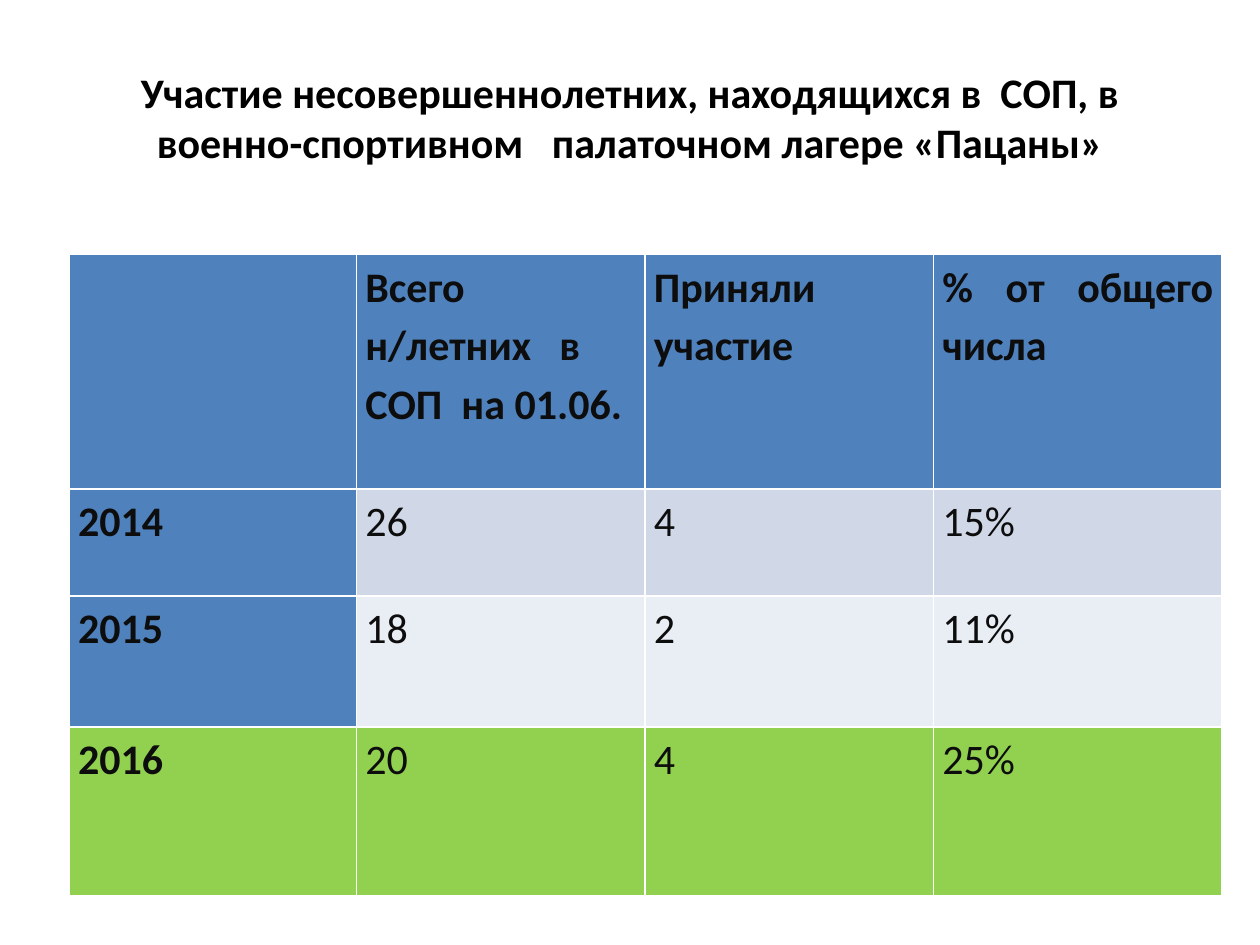
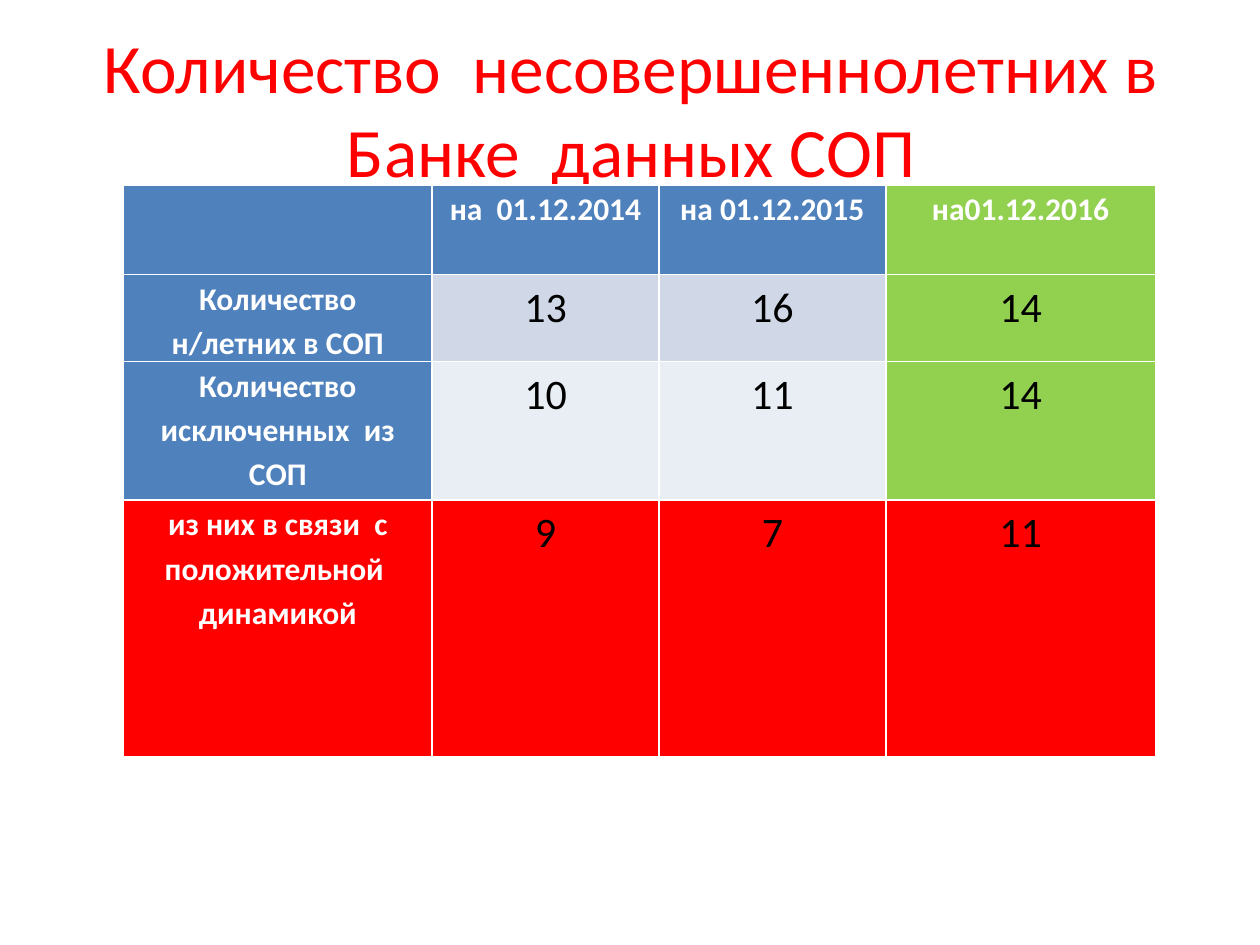
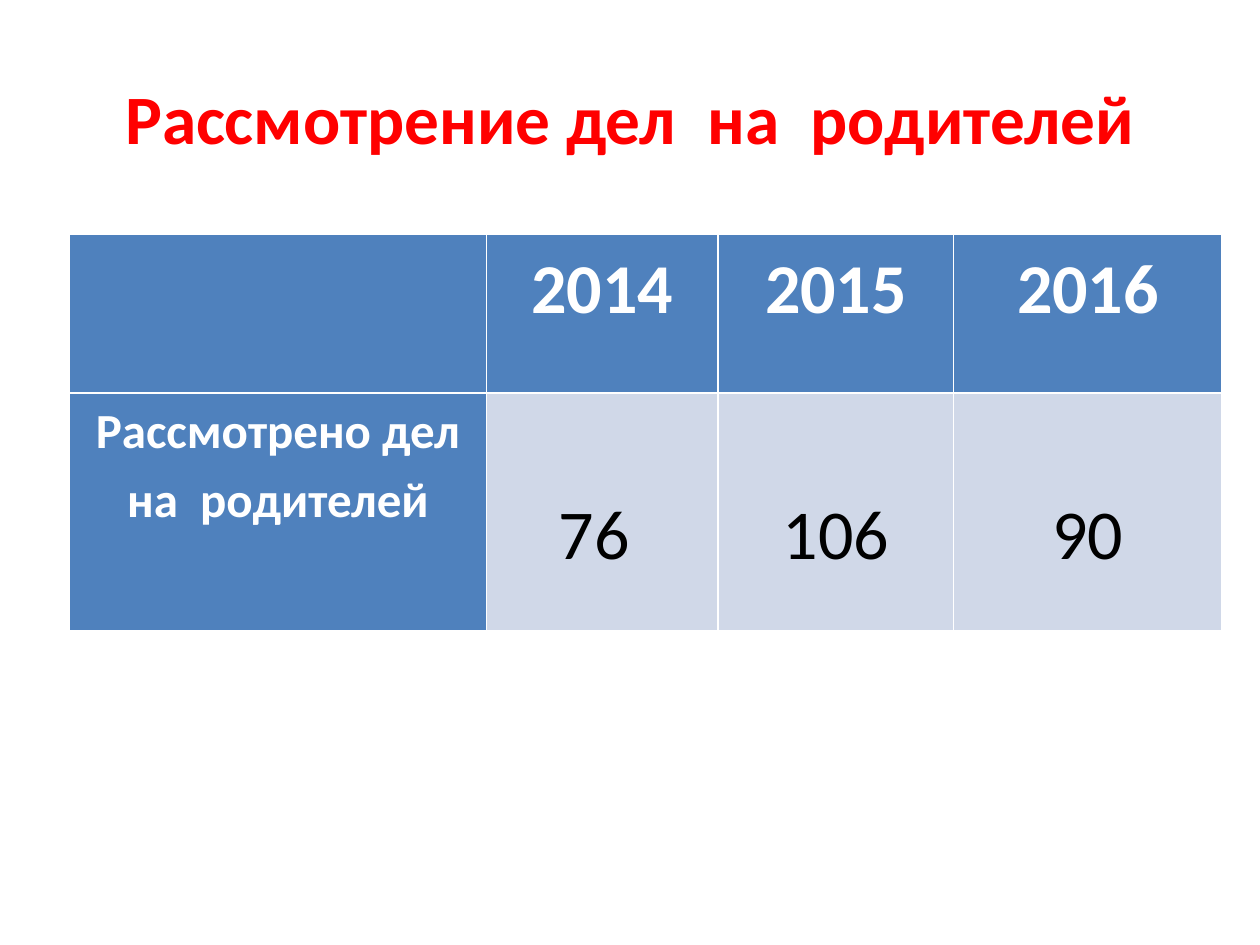
import pptx
import pptx.dml.color
import pptx.enum.text
import pptx.util
from pptx.util import Inches

FONT = "Calibri"
COLORS = {
    "header": "4F81BD",
    "band_dark": "D0D8E8",
    "band_light": "E9EDF4",
    "green": "92D050",
    "red": "FF0000",
    "white": "FFFFFF",
    "black": "000000",
    "ink": "0D0D0D",
}
ALIGN = pptx.enum.text.PP_ALIGN


def rgb(color):
    return pptx.dml.color.RGBColor.from_string(COLORS[color])


def style_paragraph(paragraph, size, color, bold, align):
    paragraph.alignment = align
    paragraph.font.name = FONT
    paragraph.font.size = pptx.util.Pt(size)
    paragraph.font.bold = bold
    paragraph.font.color.rgb = rgb(color)


def add_title(slide, text, box, size=39.6, color="red", bold=True):
    title = slide.shapes.add_textbox(*map(Inches, box)).text_frame
    title.word_wrap = True
    title.vertical_anchor = pptx.enum.text.MSO_ANCHOR.MIDDLE
    title.text = text
    style_paragraph(title.paragraphs[0], size, color, bold, ALIGN.CENTER)


def cell_fill(row, column, row_fills, column_fills):
    if row in row_fills:
        return row_fills[row]
    if column in column_fills:
        return column_fills[column]
    if row == 0 or column == 0:
        return "header"
    return "band_dark" if row % 2 else "band_light"


def add_data_table(slide, rows, left, top, widths, heights, header_size, label_size,
                   value_size, heading_color="white", value_color="black",
                   align=ALIGN.CENTER, row_fills={}, column_fills={}, value_top=0):
    table = slide.shapes.add_table(
        len(rows), len(widths), Inches(left), Inches(top),
        Inches(sum(widths)), Inches(sum(heights))).table
    table.first_col = True
    for column, width in zip(table.columns, widths):
        column.width = Inches(width)
    for table_row, height in zip(table.rows, heights):
        table_row.height = Inches(height)
    for r, values in enumerate(rows):
        for c, text in enumerate(values):
            cell = table.cell(r, c)
            cell.fill.solid()
            cell.fill.fore_color.rgb = rgb(cell_fill(r, c, row_fills, column_fills))
            cell.margin_left = cell.margin_right = Inches(0.07)
            cell.margin_top = cell.margin_bottom = 0
            if not text:
                continue
            is_heading = r == 0 or c == 0
            if not is_heading:
                cell.margin_top = Inches(value_top)
            size = header_size if r == 0 else label_size if c == 0 else value_size
            color = heading_color if is_heading else value_color
            cell.text = text
            for paragraph in cell.text_frame.paragraphs:
                style_paragraph(paragraph, size, color, is_heading, align)
                paragraph.line_spacing = 1.15


def build_camp_slide(slide):
    add_title(slide, "Участие несовершеннолетних, находящихся в  СОП, в "
              "военно-спортивном   палаточном лагере «Пацаны»",
              (0.5, 0.3, 9, 1.25), size=24, color="black")
    rows = [
        ("", "Всего  н/летних в   СОП  на 01.06.", "Приняли участие", "% от общего числа "),
        ("2014", "26", "4", "15%"),
        ("2015", "18", "2", "11%"),
        ("2016", "20", "4", "25%"),
    ]
    add_data_table(slide, rows, 0.55, 2.02, [2.28, 2.29, 2.29, 2.29],
                   [1.86, 0.85, 1.04, 1.34], 24, 24, 24,
                   heading_color="ink", value_color="ink",
                   align=ALIGN.JUSTIFY, row_fills={3: "green"})


def build_register_slide(slide):
    add_title(slide, "Количество  несовершеннолетних в Банке  данных СОП",
              (0.51, 0.23, 9, 1.25), bold=False)
    rows = [
        ("", "на  01.12.2014", "на 01.12.2015", "на01.12.2016"),
        ("Количество\nн/летних в СОП", "13", "16", "14"),
        ("Количество исключенных  из СОП", "10", "11", "14"),
        ("из них в связи  с положительной  динамикой", "9", "7", "11"),
    ]
    add_data_table(slide, rows, 0.98, 1.47, [2.45, 1.8, 1.8, 2.14],
                   [0.71, 0.69, 1.1, 2.04], 18, 18, 24,
                   row_fills={3: "red"}, column_fills={3: "green"})


def build_parents_slide(slide):
    add_title(slide, "Рассмотрение дел  на  родителей", (0.5, 0.3, 9, 1.25))
    rows = [
        ("", "2014", "2015", "2016"),
        ("Рассмотрено дел на  родителей", "76 ", "106", "90"),
    ]
    add_data_table(slide, rows, 0.55, 1.86, [3.31, 1.84, 1.87, 2.13],
                   [1.26, 1.89], 40, 28, 40, value_top=0.69)


def main():
    deck = pptx.Presentation()
    deck.slide_width = Inches(10)
    deck.slide_height = Inches(7.5)
    for build in (build_camp_slide, build_register_slide, build_parents_slide):
        build(deck.slides.add_slide(deck.slide_layouts[6]))
    deck.save("out.pptx")


if __name__ == "__main__":
    main()
